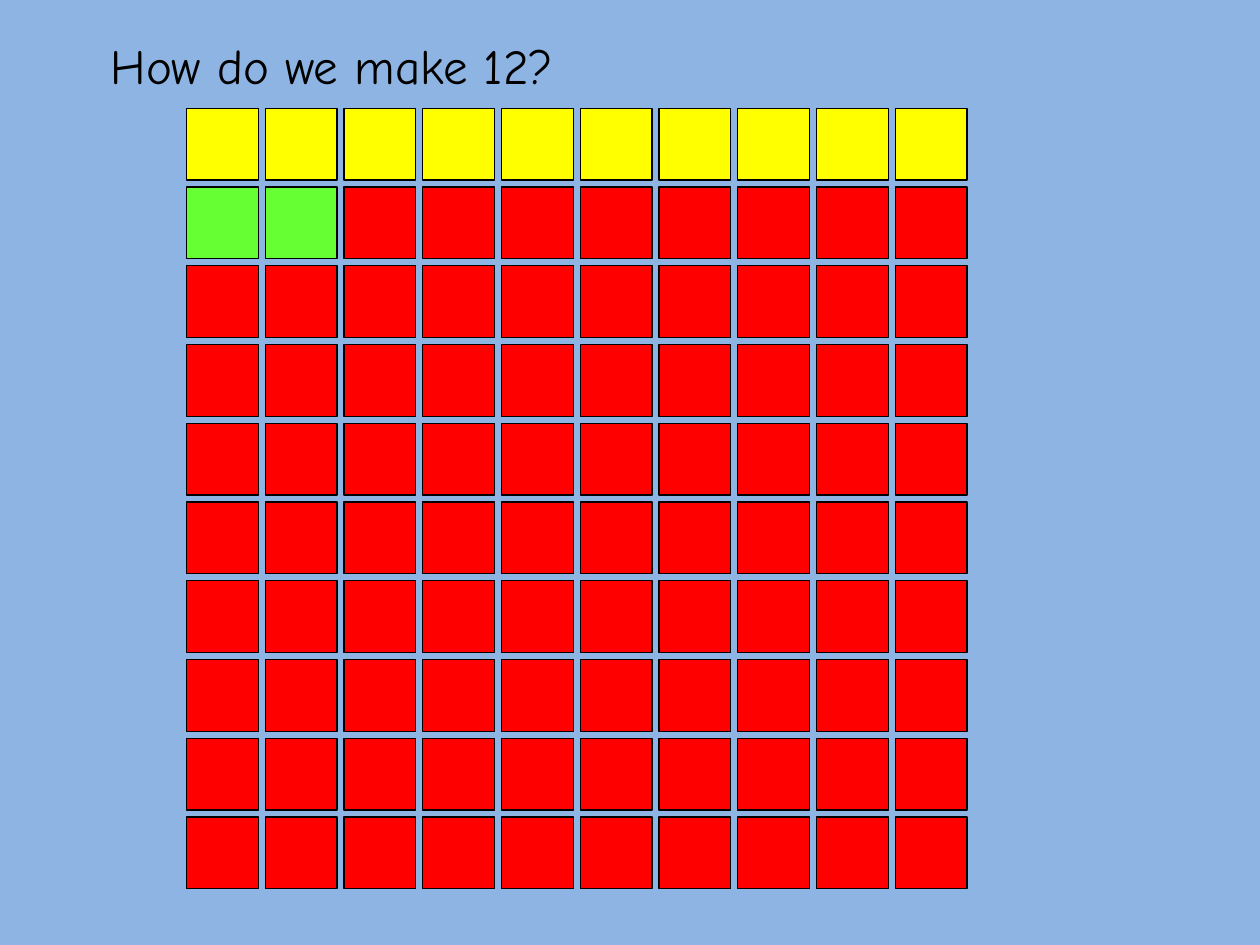
from pptx import Presentation
from pptx.dml.color import RGBColor
from pptx.enum.shapes import MSO_SHAPE as Shape
from pptx.enum.text import MSO_ANCHOR as Anchor, MSO_AUTO_SIZE as AutoSize, PP_ALIGN as Align
from pptx.util import Inches, Pt

TITLE = "How do we make 12?"
FONT = "Comic Neue"
BACKGROUND, BLACK = "8EB4E3", "000000"
TEN, UNIT, UNUSED = "FFFF00", "66FF33", "FF0000"

# Squares in reading order: one full ten, two units, the rest unused
RUNS = [(TEN, 10), (UNIT, 2), (UNUSED, 88)]
COLUMNS = 10
GRID_LEFT, GRID_TOP, GRID_SIZE = 1.48, 0.86, 6.25
STEP = GRID_SIZE / COLUMNS
SQUARE = 0.57


def paint(fill, color):
    fill.solid()
    fill.fore_color.rgb = RGBColor.from_string(color)


def set_title(slide):
    title = slide.shapes.title
    title.left, title.top, title.width, title.height = map(Inches, (0.78, 0.23, 8.52, 0.57))
    frame = title.text_frame
    frame.text = TITLE
    frame.word_wrap = True
    frame.auto_size = AutoSize.SHAPE_TO_FIT_TEXT
    frame.vertical_anchor = Anchor.TOP
    paragraph = frame.paragraphs[0]
    paragraph.alignment = Align.LEFT
    font = paragraph.runs[0].font
    font.name, font.size = FONT, Pt(28)
    font.color.rgb = RGBColor.from_string(BLACK)


def add_square(slide, row, column, color):
    square = slide.shapes.add_shape(
        Shape.RECTANGLE,
        Inches(GRID_LEFT + column * STEP), Inches(GRID_TOP + row * STEP),
        Inches(SQUARE), Inches(SQUARE))
    square.shadow.inherit = False
    paint(square.fill, color)
    paint(square.line.fill, BLACK)
    square.line.width = Pt(0.75)


def main():
    presentation = Presentation()
    presentation.slide_width, presentation.slide_height = Inches(10), Inches(7.5)
    slide = presentation.slides.add_slide(presentation.slide_layouts[5])
    paint(slide.background.fill, BACKGROUND)
    set_title(slide)
    colors = [color for color, count in RUNS for _ in range(count)]
    for index, color in enumerate(colors):
        add_square(slide, *divmod(index, COLUMNS), color)
    presentation.save("out.pptx")


if __name__ == "__main__":
    main()
